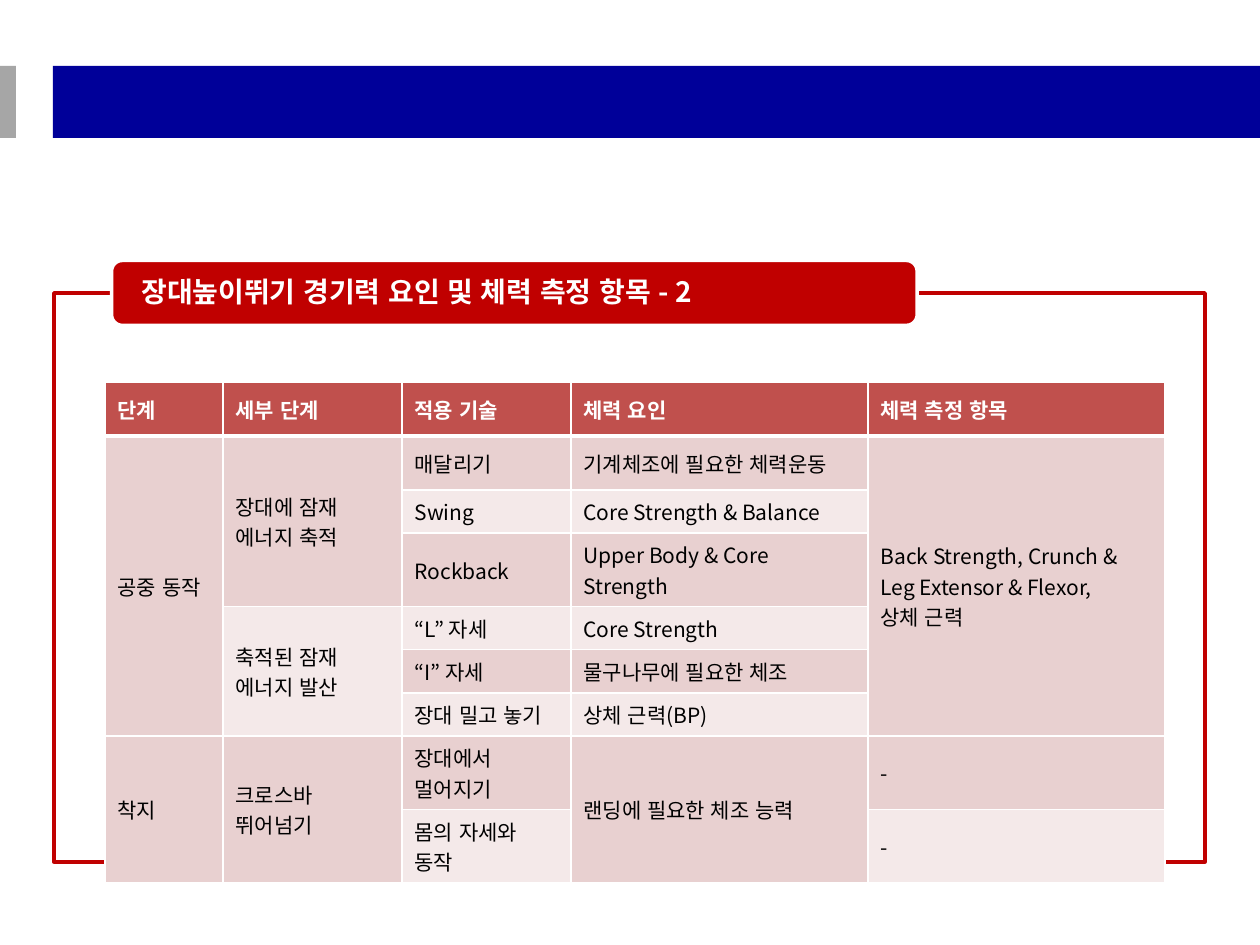
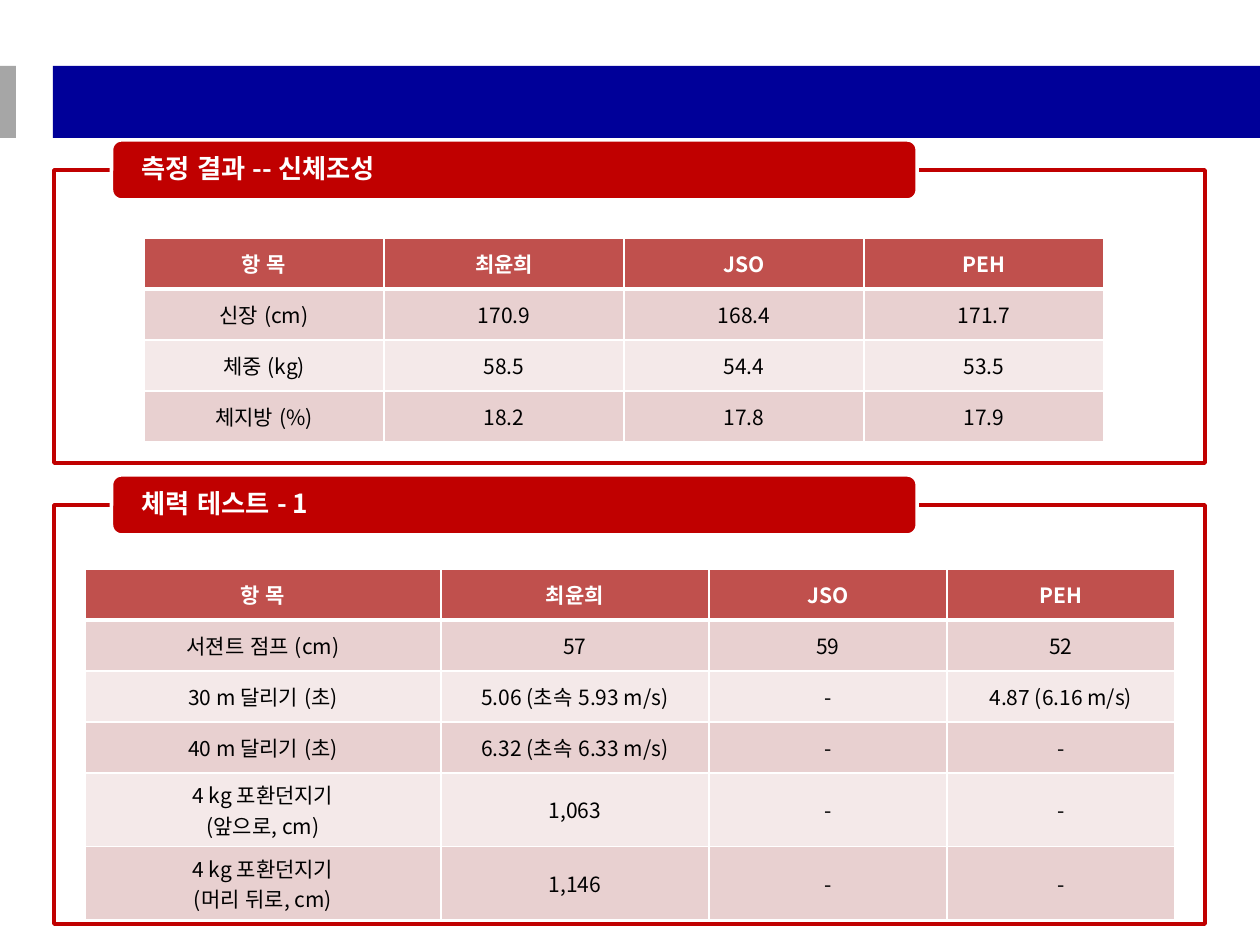
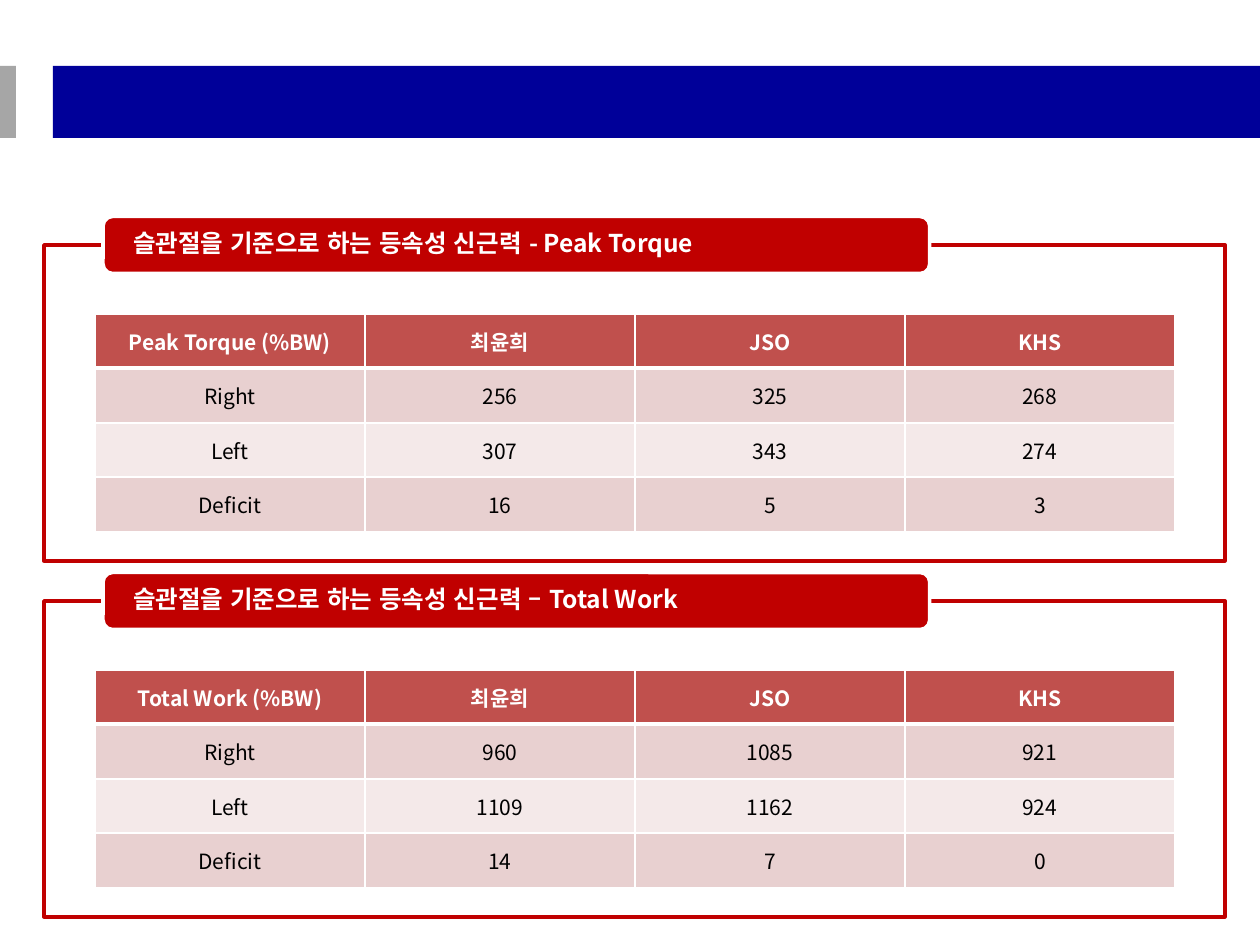
from dataclasses import dataclass
from typing import Optional

from lxml.etree import SubElement
from pptx import Presentation
from pptx.dml.color import RGBColor
from pptx.enum.lang import MSO_LANGUAGE_ID
from pptx.enum.shapes import MSO_SHAPE
from pptx.enum.text import MSO_ANCHOR, MSO_AUTO_SIZE, PP_ALIGN
from pptx.oxml.ns import qn
from pptx.util import Emu, Pt


# Theme and scale
@dataclass(frozen=True)
class Theme:
    font: str = "Noto Sans CJK KR"
    white: str = "FFFFFF"
    black: str = "000000"
    navy: str = "000099"
    gray: str = "A6A6A6"
    red: str = "C00000"
    head: str = "C0504D"
    odd: str = "E8D0D0"
    even: str = "F4E9E9"
    cell: int = 12
    line: int = 2
    thin: int = 1
    thick: int = 3


THEME = Theme()
WIDE, HIGH = 1260, 945
Row = tuple[Optional[str], ...]


def px(size: float) -> Emu:
    return Emu(round(size * 914400 / 126))


# Repeated elements
@dataclass(frozen=True)
class Box:
    left: float
    top: float
    width: float
    height: float

    def emu(self) -> tuple[Emu, Emu, Emu, Emu]:
        return px(self.left), px(self.top), px(self.width), px(self.height)


@dataclass(frozen=True)
class Grid:
    left: int
    top: int
    cols: tuple[int, ...]
    rows: tuple[int, ...]
    data: tuple[Row, ...]  # None continues the cell above
    align: PP_ALIGN = PP_ALIGN.CENTER


@dataclass(frozen=True)
class Panel:
    title: str
    size: int
    frame: Box
    tall: int
    grid: Grid

    def banner(self) -> Box:
        box = self.frame
        return Box(box.left + box.width * 0.05, box.top - self.tall / 2,
                   box.width * 0.7, self.tall)


BANDS = ((Box(53, 66, WIDE - 53, 72), THEME.navy),
         (Box(0, 66, 16, 72), THEME.gray))


# Drawing functions
def style(para, size: int, color: str, bold: bool, align: PP_ALIGN) -> None:
    para.alignment = align
    font = para.font
    font.size, font.bold = Pt(size), bold
    font.color.rgb = RGBColor.from_string(color)
    font.name = THEME.font
    font.language_id = MSO_LANGUAGE_ID.KOREAN
    SubElement(font._rPr, qn("a:ea"), typeface=THEME.font)


def block(slide, kind: MSO_SHAPE, box: Box, fill: str,
          line: Optional[str] = None) -> None:
    shape = slide.shapes.add_shape(kind, *box.emu())
    shape.shadow.inherit = False
    shape.fill.solid()
    shape.fill.fore_color.rgb = RGBColor.from_string(fill)
    if line:
        shape.line.color.rgb = RGBColor.from_string(line)
        shape.line.width = Pt(THEME.line)
    else:
        shape.line.fill.background()


def label(slide, panel: Panel, first: bool) -> None:
    box = panel.banner()
    if first:
        shape = slide.shapes.title
        shape.left, shape.top, shape.width, shape.height = box.emu()
        slide.shapes._spTree.append(shape._element)  # bring to front
    else:
        shape = slide.shapes.add_textbox(*box.emu())
    frame = shape.text_frame
    frame.text = panel.title
    frame.word_wrap = True
    frame.auto_size = MSO_AUTO_SIZE.NONE
    frame.vertical_anchor = MSO_ANCHOR.MIDDLE
    frame.margin_left = frame.margin_right = px(30)
    frame.margin_top = frame.margin_bottom = 0
    para = frame.paragraphs[0]
    para.line_spacing = 0.9
    style(para, panel.size, THEME.white, True, PP_ALIGN.LEFT)


def edge(cell, row: int) -> None:
    props = cell._tc.get_or_add_tcPr()
    wide = {"lnT": row == 1, "lnB": row == 0}
    for spot, side in enumerate(("lnL", "lnR", "lnT", "lnB")):
        points = THEME.thick if wide.get(side) else THEME.thin
        line = props.makeelement(qn(f"a:{side}"), {"w": str(Pt(points))})
        fill = SubElement(line, qn("a:solidFill"))
        SubElement(fill, qn("a:srgbClr"), val=THEME.white)
        props.insert(spot, line)


def table(slide, grid: Grid) -> None:
    box = Box(grid.left, grid.top, sum(grid.cols), sum(grid.rows))
    body = slide.shapes.add_table(
        len(grid.rows), len(grid.cols), *box.emu()).table
    body.horz_banding = False
    for col, width in zip(body.columns, grid.cols):
        col.width = px(width)
    for row, height in zip(body.rows, grid.rows):
        row.height = px(height)
    for r, texts in enumerate(grid.data):
        fill = THEME.head if r == 0 else THEME.odd if r % 2 else THEME.even
        for c, text in enumerate(texts):
            cell = body.cell(r, c)
            cell.fill.solid()
            cell.fill.fore_color.rgb = RGBColor.from_string(fill)
            edge(cell, r)
            if text is None:
                continue
            cell.text = text
            cell.vertical_anchor = MSO_ANCHOR.MIDDLE
            color = THEME.black if r else THEME.white
            for para in cell.text_frame.paragraphs:
                style(para, THEME.cell, color, r == 0, grid.align)
            last = r
            while last + 1 < len(grid.data) and grid.data[last + 1][c] is None:
                last += 1
            if last > r:
                cell.merge(body.cell(last, c))


def build(deck, panels: tuple[Panel, ...]) -> None:
    slide = deck.slides.add_slide(deck.slide_layouts[5])
    for box, fill in BANDS:
        block(slide, MSO_SHAPE.RECTANGLE, box, fill)
    for i, panel in enumerate(panels):
        block(slide, MSO_SHAPE.RECTANGLE, panel.frame, THEME.white, THEME.red)
        block(slide, MSO_SHAPE.ROUNDED_RECTANGLE, panel.banner(),
              THEME.red, THEME.white)
        label(slide, panel, i == 0)
    for panel in panels:
        table(slide, panel.grid)


# Slide 1: factors and test items
FACTORS = (
    ("단계", "세부 단계", "적용 기술", "체력 요인", "체력 측정 항목"),
    ("공중 동작", "장대에 잠재 에너지 축적", "매달리기", "기계체조에 필요한 체력운동",
     "Back Strength, Crunch & Leg Extensor & Flexor,\n상체 근력"),
    (None, None, "Swing", "Core Strength & Balance", None),
    (None, None, "Rockback", "Upper Body & Core Strength", None),
    (None, "축적된 잠재 에너지 발산", "“L” 자세", "Core Strength", None),
    (None, None, "“I” 자세", "물구나무에 필요한 체조", None),
    (None, None, "장대 밀고 놓기", "상체 근력(BP)", None),
    ("착지", "크로스바 뛰어넘기", "장대에서 멀어지기", "랜딩에 필요한 체조 능력", "-"),
    (None, None, "몸의 자세와 동작", None, "-"),
)

# Slide 2: body make-up and fitness test
NAMES = ("항 목", "최윤희", "JSO", "PEH")
BODY = (
    NAMES,
    ("신장 (cm)", "170.9", "168.4", "171.7"),
    ("체중 (kg)", "58.5", "54.4", "53.5"),
    ("체지방 (%)", "18.2", "17.8", "17.9"),
)
TESTS = (
    NAMES,
    ("서젼트 점프 (cm)", "57", "59", "52"),
    ("30 m 달리기 (초)", "5.06 (초속 5.93 m/s)", "-", "4.87 (6.16 m/s)"),
    ("40 m 달리기 (초)", "6.32 (초속 6.33 m/s)", "-", "-"),
    ("4 kg 포환던지기\n(앞으로, cm)", "1,063", "-", "-"),
    ("4 kg 포환던지기\n(머리 뒤로, cm)", "1,146", "-", "-"),
)

# Slide 3: knee strength
TORQUE = (
    ("Peak Torque (%BW)", "최윤희", "JSO", "KHS"),
    ("Right", "256", "325", "268"),
    ("Left", "307", "343", "274"),
    ("Deficit", "16", "5", "3"),
)
WORK = (
    ("Total Work (%BW)", "최윤희", "JSO", "KHS"),
    ("Right", "960", "1085", "921"),
    ("Left", "1109", "1162", "924"),
    ("Deficit", "14", "7", "0"),
)


def knee(title: str, top: int, data: tuple[Row, ...]) -> Panel:
    grid = Grid(95, top + 69, (270,) * 4, (54, 55) * 2, data)
    return Panel(f"슬관절을 기준으로 하는 등속성 신근력 {title}", 14,
                 Box(44, top, 1181, 316), 57, grid)


SLIDES = (
    (Panel("장대높이뛰기 경기력 요인 및 체력 측정 항목 - 2", 16,
           Box(54, 293, 1151, 569), 65,
           Grid(105, 382, (118, 179, 169, 297, 297),
                (54, 54, 30, 53, 39, 34, 32, 67, 67),
                FACTORS, PP_ALIGN.LEFT)),),
    (Panel("측정 결과 -- 신체조성", 15, Box(54, 170, 1151, 293), 60,
           Grid(144, 238, (240,) * 4, (51,) * 4, BODY)),
     Panel("체력 테스트 - 1", 15, Box(54, 505, 1151, 419), 60,
           Grid(85, 569, (356, 268, 238, 228), (51,) * 6, TESTS))),
    (knee("- Peak Torque", 245, TORQUE),
     knee("– Total Work", 601, WORK)),
)


def main() -> None:
    deck = Presentation()
    deck.slide_width, deck.slide_height = px(WIDE), px(HIGH)
    for panels in SLIDES:
        build(deck, panels)
    deck.save("out.pptx")


if __name__ == "__main__":
    main()
